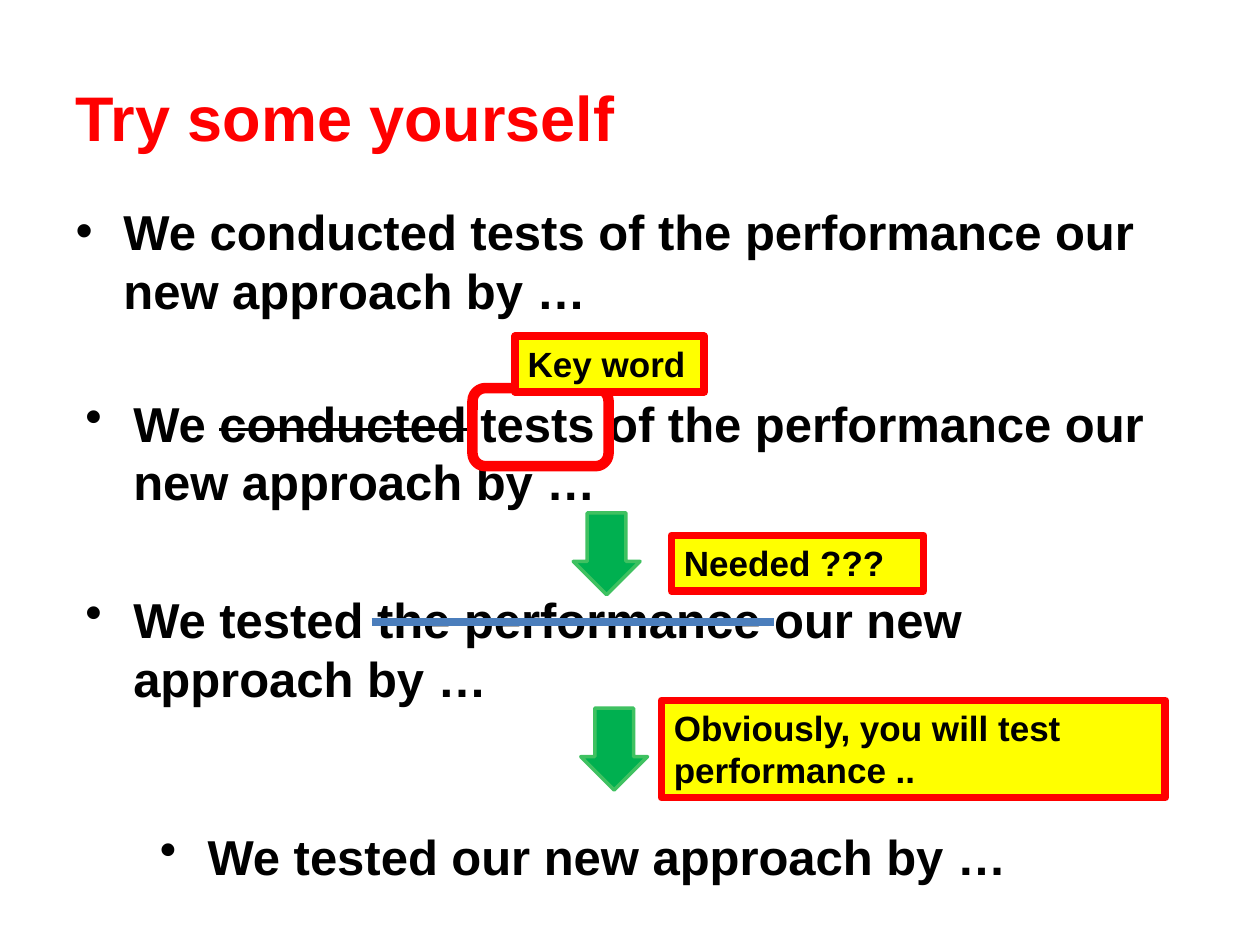
from lxml import etree
from pptx import Presentation
from pptx.dml.color import RGBColor
from pptx.enum.shapes import MSO_CONNECTOR, MSO_SHAPE
from pptx.enum.text import MSO_ANCHOR, MSO_AUTO_SIZE, PP_ALIGN
from pptx.oxml.ns import qn
from pptx.util import Inches, Pt

ARROW, FRAME, BOX = MSO_SHAPE.DOWN_ARROW, MSO_SHAPE.ROUNDED_RECTANGLE, MSO_SHAPE.RECTANGLE
STRAIGHT = MSO_CONNECTOR.STRAIGHT
LEFT, TOP, MIDDLE = PP_ALIGN.LEFT, MSO_ANCHOR.TOP, MSO_ANCHOR.MIDDLE
NO_AUTOFIT = MSO_AUTO_SIZE.NONE
COLORS = {"black": "000000", "red": "FF0000", "yellow": "FFFF00",
          "green": "00B050", "arrow_edge": "3FC161", "blue": "4B7EBC"}
FONT = "Arial"


def rgb(name):
    """Return the named colour."""
    return RGBColor.from_string(COLORS[name])


def place(shape, left, top, width, height):
    """Move and size a shape in inches."""
    shape.left, shape.top = Inches(left), Inches(top)
    shape.width, shape.height = Inches(width), Inches(height)


def style_text(paragraph, size, color="black"):
    """Make a paragraph left-aligned and bold."""
    paragraph.alignment = LEFT
    font = paragraph.font
    font.name, font.size, font.bold = FONT, Pt(size), True
    font.color.rgb = rgb(color)


def add_title(slide, text):
    """Fill the title placeholder."""
    title = slide.shapes.title
    place(title, 0.5, 0.3, 9, 1.25)
    frame = title.text_frame
    frame.text = text
    frame.vertical_anchor = MIDDLE
    style_text(frame.paragraphs[0], 36, "red")


def fill_bullets(shape, sentences, gap=45):
    """Write bulleted sentences, each a list of (text, struck out) pieces."""
    frame = shape.text_frame
    frame.word_wrap, frame.auto_size = True, NO_AUTOFIT
    frame.vertical_anchor = TOP
    for index, pieces in enumerate(sentences):
        paragraph = frame.add_paragraph() if index else frame.paragraphs[0]
        style_text(paragraph, 28)
        paragraph.space_before = Pt(gap if index else 5.6)
        properties = paragraph._p.get_or_add_pPr()
        properties.set("marL", str(Inches(0.38)))
        properties.set("indent", str(Inches(-0.38)))
        bullet = etree.Element(qn("a:buChar"), char="•")
        properties.find(qn("a:defRPr")).addprevious(bullet)
        for text, struck in pieces:
            run = paragraph.add_run()
            run.text = text
            if struck:
                run._r.get_or_add_rPr().set("strike", "sngStrike")


def add_bullets(slide, left, top, width, height, sentences):
    """Add a text box of bulleted sentences."""
    box = slide.shapes.add_textbox(*map(Inches, (left, top, width, height)))
    fill_bullets(box, sentences)


def add_outlined(slide, kind, bounds, fill, line, weight):
    """Add a preset shape with an outline and an optional fill."""
    shape = slide.shapes.add_shape(kind, *map(Inches, bounds))
    shape.shadow.inherit = False
    if fill:
        shape.fill.solid()
        shape.fill.fore_color.rgb = rgb(fill)
    else:
        shape.fill.background()
    shape.line.color.rgb = rgb(line)
    shape.line.width = Pt(weight)
    return shape


def add_step_arrow(slide, left, top):
    """Add a green arrow leading to the next revision."""
    arrow = add_outlined(slide, ARROW, (left, top, 0.53, 0.65), "green", "arrow_edge", 2)
    arrow.adjustments[0], arrow.adjustments[1] = 0.58, 0.5


def add_comment(slide, left, top, width, height, text):
    """Add a yellow comment with a red border."""
    comment = add_outlined(slide, BOX, (left, top, width, height), "yellow", "red", 4.5)
    frame = comment.text_frame
    frame.word_wrap, frame.vertical_anchor = True, TOP
    frame.text = text
    style_text(frame.paragraphs[0], 20)


def add_strike_line(slide, left, right, y):
    """Add a thick blue line through needless words."""
    line = slide.shapes.add_connector(STRAIGHT, *map(Inches, (left, y, right, y)))
    line.line.color.rgb = rgb("blue")
    line.line.width = Pt(4.5)
    etree.SubElement(line._element.spPr, qn("a:effectLst"))


def main():
    """Build the slide."""
    deck = Presentation()
    deck.slide_width, deck.slide_height = Inches(10), Inches(7.5)
    slide = deck.slides.add_slide(deck.slide_layouts[1])

    add_title(slide, "Try some yourself")
    sentence = slide.placeholders[1]
    place(sentence, 0.5, 1.55, 9, 1.53)
    fill_bullets(sentence, [
        [("We conducted tests of the performance our new approach by …", False)]])
    add_bullets(slide, 0.58, 3.07, 9, 2.28, [
        [("We ", False), ("conducted", True),
         (" tests of the performance our new approach by …", False)],
        [("We tested the performance our new approach by …", False)]])

    add_step_arrow(slide, 4.55, 4.07)
    add_outlined(slide, FRAME, (3.75, 3.08, 1.08, 0.62), None, "red", 6)
    add_comment(slide, 4.09, 2.67, 1.5, 0.44, "Key word")

    add_step_arrow(slide, 4.61, 5.62)
    add_strike_line(slide, 2.95, 6.14, 4.94)
    add_comment(slide, 5.25, 5.56, 4, 0.77, "Obviously, you will test performance ..")
    add_bullets(slide, 1.17, 6.51, 9, 0.77, [[("We tested our new approach by …", False)]])
    add_comment(slide, 5.33, 4.25, 2, 0.44, "Needed ???")

    deck.save("out.pptx")


if __name__ == "__main__":
    main()
